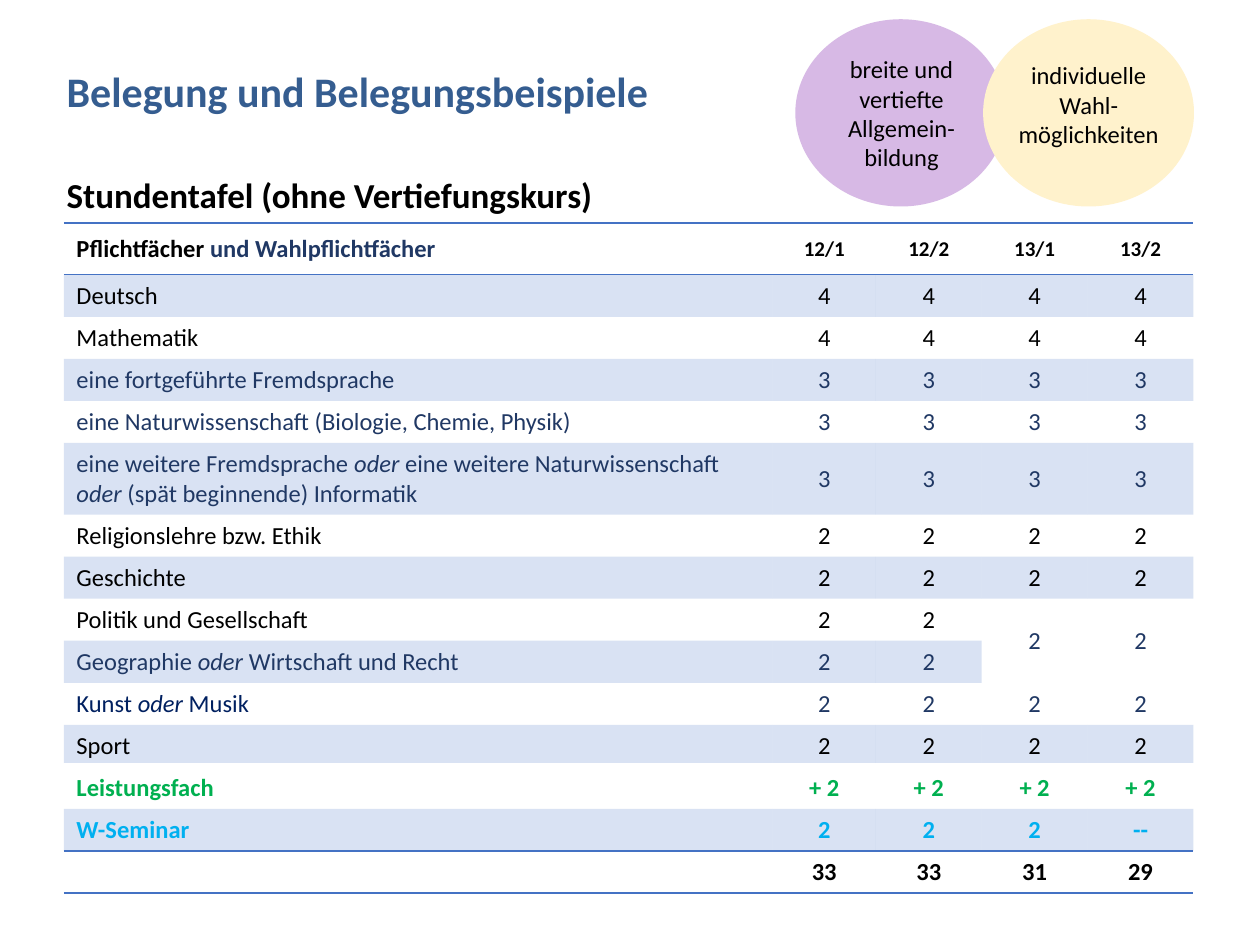
from dataclasses import dataclass
from typing import Optional

from lxml import etree
from pptx import Presentation
from pptx.dml.color import RGBColor
from pptx.enum.shapes import MSO_SHAPE
from pptx.enum.text import MSO_ANCHOR, PP_ALIGN
from pptx.oxml.ns import qn
from pptx.util import Pt

OVAL, RECT = MSO_SHAPE.OVAL, MSO_SHAPE.RECTANGLE
CENTER, LEFT = PP_ALIGN.CENTER, PP_ALIGN.LEFT
MIDDLE, TOP = MSO_ANCHOR.MIDDLE, MSO_ANCHOR.TOP

BLACK = RGBColor(0, 0, 0)
WHITE = RGBColor(255, 255, 255)
TITLE_BLUE = RGBColor(0x35, 0x5D, 0x90)
NAVY = RGBColor(0x20, 0x38, 0x64)
DEEP_NAVY = RGBColor(0x00, 0x20, 0x60)
GREEN = RGBColor(0x00, 0xB0, 0x50)
SKY = RGBColor(0x00, 0xB0, 0xF0)
ACCENT = RGBColor(0x44, 0x72, 0xC4)
LILAC = RGBColor(0xD7, 0xB9, 0xE5)
CREAM = RGBColor(0xFF, 0xF2, 0xCC)

FONT = "Calibri"
NO_STYLE = "{2D5ABB26-0587-4C30-8999-92F81FD0307C}"
HEAD_H, ROW_H, TALL_H = 29.5, 24.05, 40.9
COL_WIDTHS = (405, 59, 60.5, 60.5, 60.5)


@dataclass
class Box:
    x: float
    y: float
    w: float
    h: float

    def emu(self) -> tuple:
        return Pt(self.x), Pt(self.y), Pt(self.w), Pt(self.h)


@dataclass
class Row:
    label: str  # *...* marks italics
    values: tuple
    color: RGBColor = BLACK
    label_color: Optional[RGBColor] = None
    late_color: Optional[RGBColor] = None  # colour in year 13
    bold: bool = False
    size: float = 14
    height: float = ROW_H
    ruled: bool = False


@dataclass
class Bubble:
    oval: Box
    color: RGBColor
    text_box: Box
    lines: tuple


ROWS = (
    Row("Pflichtfächer ", ("12/1", "12/2", "13/1", "13/2"), bold=True, size=12,
        height=HEAD_H, ruled=True),
    Row("Deutsch", ("4",) * 4),
    Row("Mathematik", ("4",) * 4),
    Row("eine fortgeführte Fremdsprache", ("3",) * 4, NAVY),
    Row("eine Naturwissenschaft (Biologie, Chemie, Physik)", ("3",) * 4, NAVY),
    Row("eine weitere Fremdsprache *oder* eine weitere Naturwissenschaft "
        "*oder* (spät beginnende) Informatik", ("3",) * 4, NAVY, height=TALL_H),
    Row("Religionslehre bzw. Ethik", ("2",) * 4),
    Row("Geschichte", ("2",) * 4),
    Row("Politik und Gesellschaft", ("2",) * 4, late_color=NAVY),
    Row("Geographie *oder *Wirtschaft und Recht", ("2", "2"), NAVY),
    Row("Kunst *oder* Musik", ("2",) * 4, NAVY, label_color=DEEP_NAVY),
    Row("Sport", ("2",) * 4),
    Row("Leistungsfach", ("+ 2",) * 4, GREEN, bold=True),
    Row("W-Seminar", ("2", "2", "2", "--"), SKY, bold=True),
    Row("", ("33", "33", "31", "29"), bold=True, ruled=True),
)
SHARED_ROW = 8  # years 13/1 and 13/2 span this row and the next

BUBBLES = (
    Bubble(Box(455, 11.5, 119.5, 106), LILAC, Box(468, 27.4, 94.3, 75),
           ("breite und vertiefte Allgemein-bildung",)),
    Bubble(Box(562.3, 11.5, 119.5, 106), CREAM, Box(571, 31, 102.2, 58.3),
           ("individuelle", "Wahl-", "möglichkeiten")),
)


def add_run(p, text: str, size: float, color: RGBColor, bold=False, italic=False) -> None:
    r = p.add_run()
    r.text = text
    fmt = {"name": FONT, "size": Pt(size), "bold": bold, "italic": italic}
    for key, value in fmt.items():
        setattr(r.font, key, value)
    r.font.color.rgb = color


def add_text(s, box: Box, lines: tuple, size: float, color: RGBColor,
             bold=False, align=LEFT) -> None:
    tf = s.shapes.add_textbox(*box.emu()).text_frame
    tf.word_wrap = True
    for i, line in enumerate(lines):
        p = tf.add_paragraph() if i else tf.paragraphs[0]
        p.alignment = align
        add_run(p, line, size, color, bold)


def add_figure(s, kind, box: Box, line: RGBColor, width: float,
               fill: Optional[RGBColor] = None) -> None:
    sp = s.shapes.add_shape(kind, *box.emu())
    sp.shadow.inherit = False
    if fill is None:
        sp.fill.background()
    else:
        sp.fill.solid()
        sp.fill.fore_color.rgb = fill
    sp.line.color.rgb = line
    sp.line.width = Pt(width)


def rule_cell(cell) -> None:
    """Draw the top and bottom border; must precede the cell's fill."""
    tc_pr = cell._tc.get_or_add_tcPr()
    for tag in ("a:lnT", "a:lnB"):
        ln = etree.SubElement(tc_pr, qn(tag), w=str(Pt(1)))
        fill = etree.SubElement(ln, qn("a:solidFill"))
        etree.SubElement(fill, qn("a:srgbClr"), val=str(ACCENT))


def fill_cell(cell, shaded: bool) -> None:
    if not shaded:
        cell.fill.background()
        return
    cell.fill.solid()
    cell.fill.fore_color.rgb = ACCENT
    clr = cell._tc.tcPr.find(".//" + qn("a:srgbClr"))
    etree.SubElement(clr, qn("a:alpha"), val="20000")


def add_timetable(s, box: Box) -> None:
    tbl = s.shapes.add_table(len(ROWS), len(COL_WIDTHS), *box.emu()).table
    tbl.first_row = tbl.horz_banding = False
    tbl._tbl.tblPr.find(qn("a:tableStyleId")).text = NO_STYLE
    for col, width in zip(tbl.columns, COL_WIDTHS):
        col.width = Pt(width)

    for i, row in enumerate(ROWS):
        tbl.rows[i].height = Pt(row.height)
        for j in range(len(COL_WIDTHS)):
            cell = tbl.cell(i, j)
            if row.ruled:
                rule_cell(cell)
            fill_cell(cell, i % 2 == 1 and j <= len(row.values))
            cell.vertical_anchor = MIDDLE if j or i == 0 else TOP

        # Subject name, italics on every second part
        p = tbl.cell(i, 0).text_frame.paragraphs[0]
        for k, part in enumerate(row.label.split("*")):
            if part:
                add_run(p, part, 14, row.label_color or row.color, row.bold, k % 2 == 1)
        if not row.label:
            etree.SubElement(p._p, qn("a:endParaRPr"), sz="1400")

        # Weekly hours
        for j, value in enumerate(row.values, 1):
            p = tbl.cell(i, j).text_frame.paragraphs[0]
            p.alignment = CENTER
            color = row.late_color if j > 2 and row.late_color else row.color
            add_run(p, value, row.size, color, row.bold)

    add_run(tbl.cell(0, 0).text_frame.paragraphs[0], "und Wahlpflichtfächer", 14, NAVY, True)
    for j in (3, 4):
        tbl.cell(SHARED_ROW, j).merge(tbl.cell(SHARED_ROW + 1, j))


def main() -> None:
    prs = Presentation()
    prs.slide_width, prs.slide_height = Pt(720), Pt(540)
    s = prs.slides.add_slide(prs.slide_layouts[6])

    # Headings
    add_text(s, Box(31, 34, 675, 62.6), ("Belegung und Belegungsbeispiele",),
             24, TITLE_BLUE, True)
    add_text(s, Box(31, 95.8, 651.6, 31.7), ("Stundentafel (ohne Vertiefungskurs)",),
             20, BLACK, True)

    # Timetable
    add_timetable(s, Box(36.5, 127.5, sum(COL_WIDTHS), sum(r.height for r in ROWS)))

    # Bubbles
    for b in BUBBLES:
        add_figure(s, OVAL, b.oval, b.color, 1, b.color)
        add_text(s, b.text_box, b.lines, 14, BLACK, align=CENTER)

    # White frame around the advanced course
    add_figure(s, RECT, Box(36.5, 437, 645.5, 23), WHITE, 2.25)
    prs.save("out.pptx")


if __name__ == "__main__":
    main()
